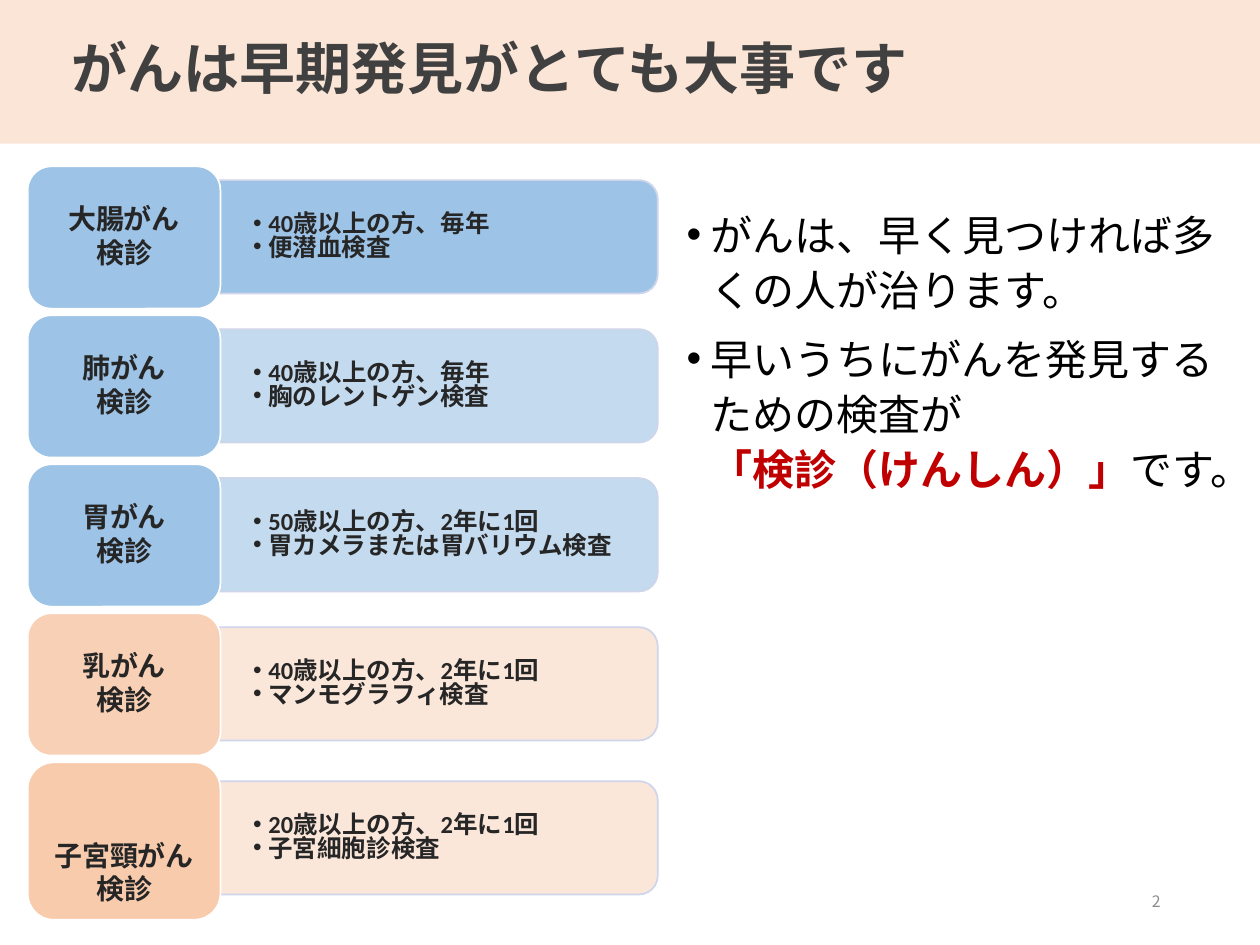
from lxml import etree
from pptx import Presentation
from pptx.dml.color import RGBColor
from pptx.enum.shapes import MSO_SHAPE
from pptx.enum.text import MSO_ANCHOR, MSO_AUTO_SIZE, PP_ALIGN
from pptx.oxml.ns import qn
from pptx.util import Inches, Pt

RECT, ROUND, BAR = MSO_SHAPE.RECTANGLE, MSO_SHAPE.ROUNDED_RECTANGLE, MSO_SHAPE.ROUND_2_SAME_RECTANGLE
MIDDLE, BOTTOM = MSO_ANCHOR.MIDDLE, MSO_ANCHOR.BOTTOM
LEFT, CENTER, RIGHT = PP_ALIGN.LEFT, PP_ALIGN.CENTER, PP_ALIGN.RIGHT
NO_FIT = MSO_AUTO_SIZE.NONE
SANS = "Noto Sans CJK JP"
color = RGBColor.from_string


def style(para, size, face, ink, bold=False, align=LEFT, spacing=1.0, indent=0):
    """Format a paragraph; an indent above zero gives it a hanging bullet."""
    font = para.font
    font.size, font.name, font.bold = Pt(size), face, bold
    font.color.rgb = color(ink)
    para.alignment, para.line_spacing = align, spacing
    props = para._p.pPr
    base = props.find(qn("a:defRPr"))
    etree.SubElement(base, qn("a:ea")).set("typeface", SANS)
    if indent:
        props.set("marL", str(Inches(indent)))
        props.set("indent", str(-Inches(indent)))
        mark = etree.Element(qn("a:buFont"))
        mark.set("typeface", "Arial")
        base.addprevious(mark)
        mark = etree.Element(qn("a:buChar"))
        mark.set("char", "•")
        base.addprevious(mark)


def block(kind, box, fill, alpha=100, edge=None):
    shape = shapes.add_shape(kind, *map(Inches, box))
    shape.shadow.inherit = False
    shape.fill.solid()
    shape.fill.fore_color.rgb = color(fill)
    if alpha < 100:
        tint = shape._element.spPr.find(qn("a:solidFill"))[0]
        etree.SubElement(tint, qn("a:alpha")).set("val", str(alpha * 1000))
    if edge:
        shape.line.color.rgb = color(edge)
        shape.line.width = Pt(1)
    else:
        shape.line.fill.background()
    return shape


prs = Presentation()
prs.slide_width, prs.slide_height = Inches(10), Inches(7.5)
slide = prs.slides.add_slide(prs.slide_layouts[1])
shapes = slide.shapes
title, body = slide.placeholders

# Header band, behind the title
band = block(RECT, (0, 0, 10, 1.14), "FBE5D6")
shapes._spTree.insert(2, band._element)
title.left, title.top, title.width, title.height = map(Inches, (0.47, 0.2, 8.62, 0.74))
title.text_frame.text = "がんは早期発見がとても大事です"
title.text_frame.vertical_anchor = MIDDLE
title.text_frame.auto_size = NO_FIT
style(title.text_frame.paragraphs[0], 32, "Arial", "404040", True, spacing=0.9)

# Message on the right
body.left, body.top, body.width, body.height = map(Inches, (5.35, 1.57, 4.65, 4.76))
frame = body.text_frame
frame.auto_size = NO_FIT
frame.text = "がんは、早く見つければ多くの人が治ります。\n早いうちにがんを発見するための検査が"
for para in frame.paragraphs:
    style(para, 24, SANS, "000000", spacing=1.1, indent=0.19)
    para.space_before = Pt(7.5)
para.add_line_break()
key = para.add_run()
key.text = "「検診（けんしん）」"
key.font.bold = True
key.font.color.rgb = color("C00000")
para.add_run().text = "です。"

# Screening rows: name, details, card fill and alpha, bar fill and alpha
rows = [
    ("大腸がん", "40歳以上の方、毎年\n便潜血検査", "9DC3E6", 100, "9DC3E6", 100),
    ("肺がん", "40歳以上の方、毎年\n胸のレントゲン検査", "9DC3E6", 100, "BDD7EE", 90),
    ("胃がん", "50歳以上の方、2年に1回\n胃カメラまたは胃バリウム検査", "9DC3E6", 100, "BDD7EE", 90),
    ("乳がん", "40歳以上の方、2年に1回\nマンモグラフィ検査", "F8CBAD", 90, "FBE5D6", 90),
    ("子宮頸がん", "20歳以上の方、2年に1回\n子宮細胞診検査", "F8CBAD", 100, "FBE5D6", 90),
]
first, final = 1.32, 6.05
pitch = (final - first) / (len(rows) - 1)
long, thick = 3.48, 0.9
for i, (name, details, fill, alpha, pale, fade) in enumerate(rows):
    last = i == len(rows) - 1
    top = first + i * pitch
    mid = top + (0.6 if last else 0.56)

    # The bar stands upright and is turned so its round corners face right
    bar = block(BAR, (3.48 - thick / 2, mid - long / 2, thick, long), pale, fade, "CFD5EA")
    bar.rotation = 90
    note = shapes.add_textbox(Inches(1.74), Inches(mid - 0.4), Inches(3.44), Inches(0.81))
    frame = note.text_frame
    frame.word_wrap = True
    frame.vertical_anchor = MIDDLE
    frame.margin_left = frame.margin_right = Inches(0.27)
    frame.margin_top = frame.margin_bottom = Inches(0.14)
    frame.text = details
    for para in frame.paragraphs:
        style(para, 14, "Calibri", "262626", True, spacing=0.8, indent=0.12)

    card = block(ROUND, (0.22, top, 1.53, 1.25 if last else 1.13), fill, alpha, "FFFFFF")
    frame = card.text_frame
    frame.word_wrap = True
    frame.vertical_anchor = BOTTOM if last else MIDDLE
    frame.margin_left = frame.margin_right = Inches(0.07)
    frame.margin_top = frame.margin_bottom = Inches(0.05)
    frame.text = name + "\n検診"
    for para in frame.paragraphs:
        style(para, 16, "Calibri", "262626", True, CENTER, 0.9)
        para.space_after = Pt(2)

# Page number
page = shapes.add_textbox(Inches(7.06), Inches(6.95), Inches(2.25), Inches(0.4))
page.text_frame.word_wrap = True
page.text_frame.vertical_anchor = MIDDLE
page.text_frame.text = "2"
style(page.text_frame.paragraphs[0], 9, SANS, "8C8C8C", align=RIGHT)

prs.save("out.pptx")
